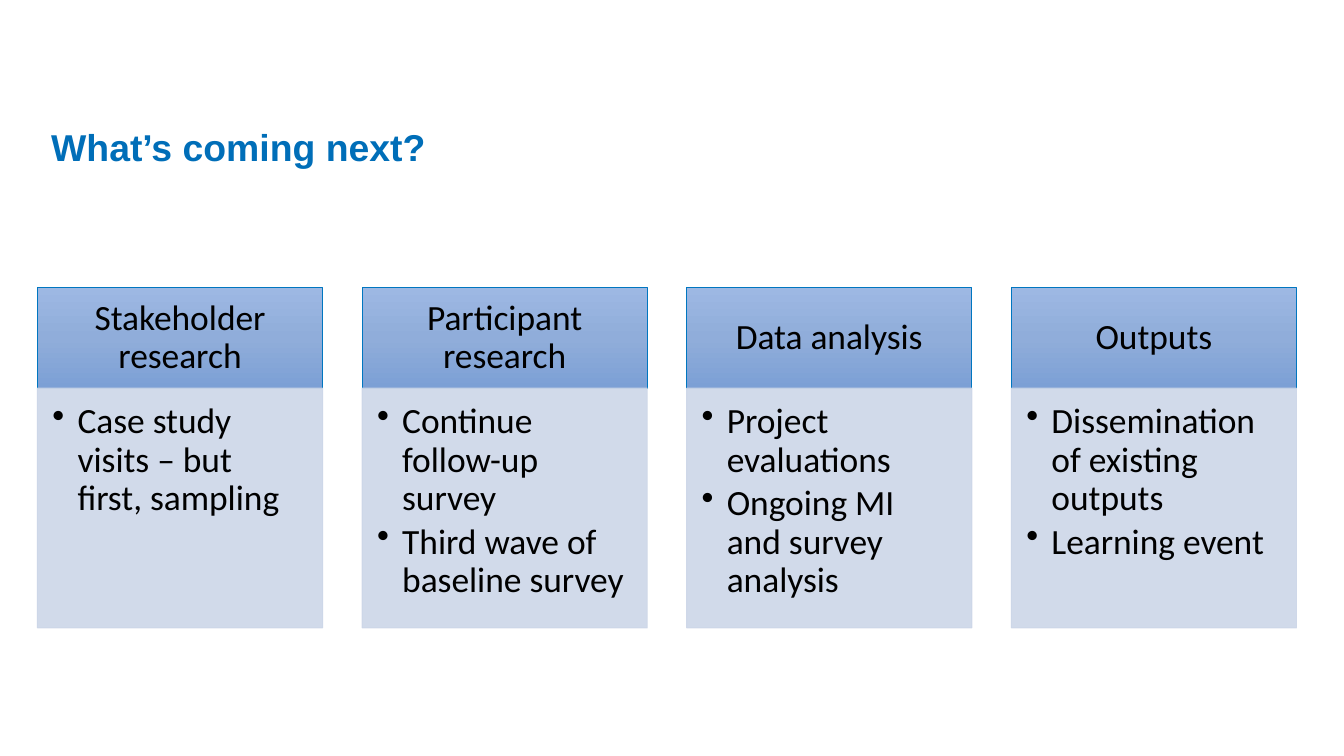
from copy import deepcopy
from dataclasses import dataclass

from lxml import etree
from pptx import Presentation
from pptx.dml.color import RGBColor
from pptx.enum.shapes import MSO_SHAPE
from pptx.enum.text import MSO_ANCHOR, PP_ALIGN
from pptx.oxml.ns import qn
from pptx.util import Pt

RECTANGLE = MSO_SHAPE.RECTANGLE
TOP, MIDDLE = MSO_ANCHOR.TOP, MSO_ANCHOR.MIDDLE
LEFT, CENTER = PP_ALIGN.LEFT, PP_ALIGN.CENTER
TITLE_ONLY = 5


@dataclass(frozen=True)
class Theme:
    title: RGBColor = RGBColor(0x00, 0x6E, 0xB8)
    text: RGBColor = RGBColor(0x00, 0x00, 0x00)
    header_line: RGBColor = RGBColor(0x00, 0x76, 0xC0)
    header_gradient: tuple = ("9DB8E3", "90ADDA", "7CA0D5")
    panel: RGBColor = RGBColor(0xCC, 0xD6, 0xE8)
    panel_opacity: int = 90
    title_font: str = "Arial"
    body_font: str = "Calibri"
    title_size: int = 20
    body_size: int = 19


THEME = Theme()

COLUMN_LEFT, COLUMN_PITCH, COLUMN_WIDTH = 20.1, 173.9, 152.8
HEADER_TOP, HEADER_HEIGHT, PANEL_HEIGHT = 154, 54, 128.4
BULLET_INDENT = 13.5

COLUMNS = (
    ("Stakeholder research", ("Case study visits – but first, sampling",)),
    ("Participant research",
     ("Continue follow-up survey", "Third wave of baseline survey")),
    ("Data analysis",
     ("Project evaluations", "Ongoing MI and survey analysis")),
    ("Outputs", ("Dissemination of existing outputs", "Learning event")),
)


def style_font(font, name, size, color, bold=False):
    font.name = name
    font.size = Pt(size)
    font.color.rgb = color
    font.bold = bold


def add_title(slide, text):
    title = slide.shapes.title
    title.left, title.top = Pt(20.2), Pt(60.5)
    title.width, title.height = Pt(620.6), Pt(39.6)
    frame = title.text_frame
    frame.text = text
    frame.vertical_anchor = MIDDLE
    paragraph = frame.paragraphs[0]
    paragraph.alignment = LEFT
    paragraph.line_spacing = 0.9
    style_font(paragraph.runs[0].font, THEME.title_font, THEME.title_size,
               THEME.title, bold=True)


def fill_gradient(shape, colors):
    """Fill from top to bottom with three evenly spaced colours."""
    shape.fill.gradient()
    shape.fill.gradient_angle = 270
    stop_list = shape.fill.gradient_stops
    first = shape._element.spPr.find(".//" + qn("a:gs"))
    first.addnext(deepcopy(first))
    stop_list = shape.fill.gradient_stops
    for stop, position, color in zip(stop_list, (0, 0.5, 1), colors):
        stop.position = position
        stop.color.rgb = RGBColor.from_string(color)


def set_opacity(shape, percent):
    """Apply one opacity to the solid fill and the outline."""
    for color in shape._element.spPr.iter(qn("a:srgbClr")):
        alpha = etree.SubElement(color, qn("a:alpha"))
        alpha.set("val", str(percent * 1000))


def add_bullet(paragraph):
    properties = paragraph._p.get_or_add_pPr()
    properties.set("marL", str(Pt(BULLET_INDENT)))
    properties.set("indent", str(-Pt(BULLET_INDENT)))
    etree.SubElement(properties, qn("a:buChar")).set("char", "•")


def add_box(slide, left, top, height, line_color):
    shape = slide.shapes.add_shape(RECTANGLE, Pt(left), Pt(top),
                                   Pt(COLUMN_WIDTH), Pt(height))
    shape.shadow.inherit = False
    shape.line.color.rgb = line_color
    shape.line.width = Pt(0.5)
    return shape


def write_text(shape, lines, margins, anchor, alignment, space_after,
               bulleted=False):
    frame = shape.text_frame
    frame.word_wrap = True
    frame.vertical_anchor = anchor
    (frame.margin_left, frame.margin_top,
     frame.margin_right, frame.margin_bottom) = map(Pt, margins)
    frame.text = "\n".join(lines)
    for paragraph in frame.paragraphs:
        if bulleted:
            paragraph.level = 1
            add_bullet(paragraph)
        paragraph.alignment = alignment
        paragraph.line_spacing = 0.9
        paragraph.space_after = Pt(space_after)
        style_font(paragraph.runs[0].font, THEME.body_font, THEME.body_size,
                   THEME.text)


def add_header(slide, left, text):
    header = add_box(slide, left, HEADER_TOP, HEADER_HEIGHT,
                     THEME.header_line)
    fill_gradient(header, THEME.header_gradient)
    write_text(header, (text,), (10.8, 6, 10.8, 6), MIDDLE, CENTER, 6.65)


def add_panel(slide, left, items):
    panel = add_box(slide, left, HEADER_TOP + HEADER_HEIGHT, PANEL_HEIGHT,
                    THEME.panel)
    panel.fill.solid()
    panel.fill.fore_color.rgb = THEME.panel
    set_opacity(panel, THEME.panel_opacity)
    write_text(panel, items, (8, 8, 10.8, 12), TOP, LEFT, 2.85,
               bulleted=True)


def main():
    presentation = Presentation()
    presentation.slide_width, presentation.slide_height = Pt(720), Pt(405)
    slide = presentation.slides.add_slide(
        presentation.slide_layouts[TITLE_ONLY])
    add_title(slide, "What’s coming next?")
    for index, (heading, items) in enumerate(COLUMNS):
        left = COLUMN_LEFT + index * COLUMN_PITCH
        add_header(slide, left, heading)
        add_panel(slide, left, items)
    presentation.save("out.pptx")


if __name__ == "__main__":
    main()
